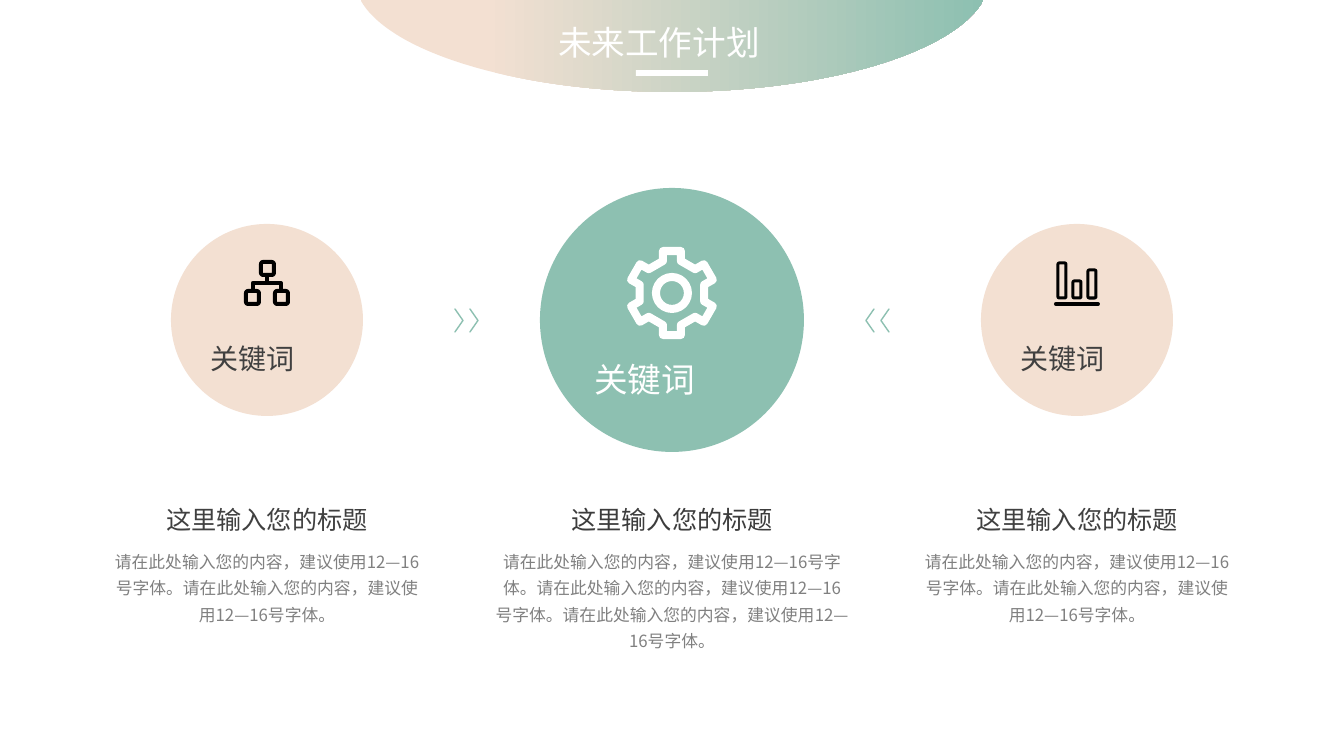
"""Build the future work plan slide: a curved title banner and three keyword columns."""
import dataclasses
import math

import lxml.etree
import pptx
import pptx.dml.color
import pptx.enum.dml
import pptx.enum.shapes
import pptx.enum.text
import pptx.oxml.ns
import pptx.util

TITLE = "未来工作计划"
KEYWORD = "关键词"
HEADING = "这里输入您的标题"
SENTENCE = "请在此处输入您的内容，建议使用12—16号字体。"


@dataclasses.dataclass(frozen=True)
class Theme:
    font: str = "Noto Sans CJK SC"
    peach: str = "F3E0D2"
    green: str = "8DC0B1"
    white: str = "FFFFFF"
    black: str = "000000"
    dark: str = "404040"
    darker: str = "3C3C3C"
    grey: str = "808080"
    large: int = 24
    medium: int = 20
    heading: int = 18
    body: int = 12


THEME = Theme()
WIDTH, HEIGHT = 1344, 756
SCALE = 12192000 / WIDTH
CENTER_X, CENTER_Y = WIDTH // 2, 320

COLUMNS = [
    dict(x=267, diameter=192, fill=THEME.peach, key_top=337, key_width=133, key_size=THEME.medium,
         key_color=THEME.dark, head_color=THEME.dark, body_width=326, sentences=2),
    dict(x=672, diameter=264, fill=THEME.green, key_top=354, key_width=175, key_size=THEME.large,
         key_color=THEME.white, head_color=THEME.darker, body_width=373, sentences=3),
    dict(x=1077, diameter=192, fill=THEME.peach, key_top=337, key_width=133, key_size=THEME.medium,
         key_color=THEME.dark, head_color=THEME.dark, body_width=326, sentences=2),
]
CHEVRONS = [(455, 0), (470, 0), (866, 180), (881, 180)]
ORGANISATION_BOXES = [(261, 262), (246, 291), (275, 291)]
ORGANISATION_LINKS = [
    [(267, 275), (267, 283)],
    [(253, 291), (253, 283), (281, 283), (281, 291)],
]
BARS = [(1058, 263), (1073, 281), (1088, 270)]
BAR_BASE, BAR_WIDTH = 298, 8
BASELINE = [(1056, 304), (1098, 304)]
BANNER_CURVE = [(311, 1), (281, 53), (153, 92), (0, 92)]
GEAR_CENTER_Y, GEAR_TEETH = 293, 6
GEAR_TOOTH = [(-9, -32), (-9, -42), (9, -42), (9, -32)]

KIND = pptx.enum.shapes.MSO_SHAPE
ALIGN = pptx.enum.text.PP_ALIGN


def px(length):
    return pptx.util.Emu(round(length * SCALE))


def rgb(color):
    return pptx.dml.color.RGBColor.from_string(color)


def paint(shape, fill=None, line=None, weight=0):
    shape.shadow.inherit = False
    if fill:
        shape.fill.solid()
        shape.fill.fore_color.rgb = rgb(fill)
    else:
        shape.fill.background()
    if line:
        shape.line.color.rgb = rgb(line)
        shape.line.width = weight
        outline = shape.element.find(".//" + pptx.oxml.ns.qn("a:ln"))
        outline.set("cap", "rnd")
        lxml.etree.SubElement(outline, pptx.oxml.ns.qn("a:round"))
    else:
        shape.line.fill.background()
    return shape


def add_preset(slide, kind, left, top, width, height, **style):
    shape = slide.shapes.add_shape(kind, px(left), px(top), px(width), px(height))
    return paint(shape, **style)


def add_outline(slide, points, closed, **style):
    points = [(px(x), px(y)) for x, y in points]
    builder = slide.shapes.build_freeform(*points[0])
    builder.add_line_segments(points[1:], close=closed)
    return paint(builder.convert_to_shape(), **style)


def place_text(shape, text, center, top, width, height, size, color, align, spacing=1.0):
    shape.left, shape.top = px(center - width / 2), px(top)
    shape.width, shape.height = px(width), px(height)
    frame = shape.text_frame
    frame.text = text
    frame.word_wrap = True
    frame.auto_size = pptx.enum.text.MSO_AUTO_SIZE.NONE
    frame.vertical_anchor = pptx.enum.text.MSO_ANCHOR.TOP
    paragraph = frame.paragraphs[0]
    paragraph.alignment = align
    paragraph.line_spacing = spacing
    paragraph.font.name = THEME.font
    paragraph.font.size = pptx.util.Pt(size)
    paragraph.font.color.rgb = rgb(color)
    properties = shape.element.find(".//" + pptx.oxml.ns.qn("a:defRPr"))
    lxml.etree.SubElement(properties, pptx.oxml.ns.qn("a:ea"), typeface=THEME.font)


def add_text(slide, *details):
    place_text(slide.shapes.add_textbox(0, 0, 0, 0), *details)


def add_banner(slide):
    start, pull, push, end = BANNER_CURVE
    half = []
    for step in range(41):
        t = step / 40
        weights = ((1 - t) ** 3, 3 * t * (1 - t) ** 2, 3 * t * t * (1 - t), t ** 3)
        half.append(tuple(
            sum(weight * point[axis] for weight, point in zip(weights, (start, pull, push, end)))
            for axis in (0, 1)))
    right = [(CENTER_X + x, y) for x, y in [(start[0], 0)] + half]
    left = [(2 * CENTER_X - x, y) for x, y in reversed(right)]
    banner = add_outline(slide, right + left, True)
    banner.fill.gradient()
    banner.fill.gradient_angle = 0
    for stop, position, color in zip(banner.fill.gradient_stops, (0.2, 1), (THEME.peach, THEME.green)):
        stop.position = position
        stop.color.rgb = rgb(color)
    title = slide.shapes.title
    title.element.addprevious(banner.element)
    place_text(title, TITLE, CENTER_X, 17, 248, 50, THEME.large, THEME.white, ALIGN.LEFT)
    add_preset(slide, KIND.RECTANGLE, CENTER_X - 36, 70, 72, 6, fill=THEME.white)


def add_column(slide, x, diameter, fill, key_top, key_width, key_size, key_color,
               head_color, body_width, sentences):
    add_preset(slide, KIND.OVAL, x - diameter / 2, CENTER_Y - diameter / 2, diameter, diameter, fill=fill)
    add_text(slide, KEYWORD, x, key_top, key_width, 2 * key_size, key_size, key_color, ALIGN.LEFT)
    add_text(slide, HEADING, x, 499, 293, 40, THEME.heading, head_color, ALIGN.CENTER)
    add_text(slide, SENTENCE * sentences, x, 541, body_width, 38 + 26 * sentences,
             THEME.body, THEME.grey, ALIGN.CENTER, 1.3)


def add_icons(slide):
    thin = dict(line=THEME.black, weight=px(4))
    for left, top in ORGANISATION_BOXES:
        add_preset(slide, KIND.ROUNDED_RECTANGLE, left, top, 13, 13, **thin)
    for points in ORGANISATION_LINKS:
        add_outline(slide, points, False, **thin)
    for left, top in BARS:
        add_preset(slide, KIND.ROUNDED_RECTANGLE, left, top, BAR_WIDTH, BAR_BASE - top,
                   line=THEME.black, weight=px(3))
    add_outline(slide, BASELINE, False, **thin)

    thick = dict(line=THEME.white, weight=px(8))
    gear = []
    for tooth in range(GEAR_TEETH):
        angle = 2 * math.pi * tooth / GEAR_TEETH
        for x, y in GEAR_TOOTH:
            gear.append((CENTER_X + x * math.cos(angle) - y * math.sin(angle),
                         GEAR_CENTER_Y + x * math.sin(angle) + y * math.cos(angle)))
    add_outline(slide, gear, True, **thick)
    add_preset(slide, KIND.OVAL, CENTER_X - 16, GEAR_CENTER_Y - 16, 32, 32, **thick)


def main():
    presentation = pptx.Presentation()
    presentation.slide_width, presentation.slide_height = px(WIDTH), px(HEIGHT)
    slide = presentation.slides.add_slide(presentation.slide_layouts[5])
    add_banner(slide)
    for column in COLUMNS:
        add_column(slide, **column)
    for left, rotation in CHEVRONS:
        chevron = add_preset(slide, KIND.CHEVRON, left, 309, 8, 23,
                             line=THEME.green, weight=pptx.util.Pt(1))
        chevron.adjustments[0] = 1
        chevron.rotation = rotation
    add_icons(slide)
    presentation.save("out.pptx")


if __name__ == "__main__":
    main()
